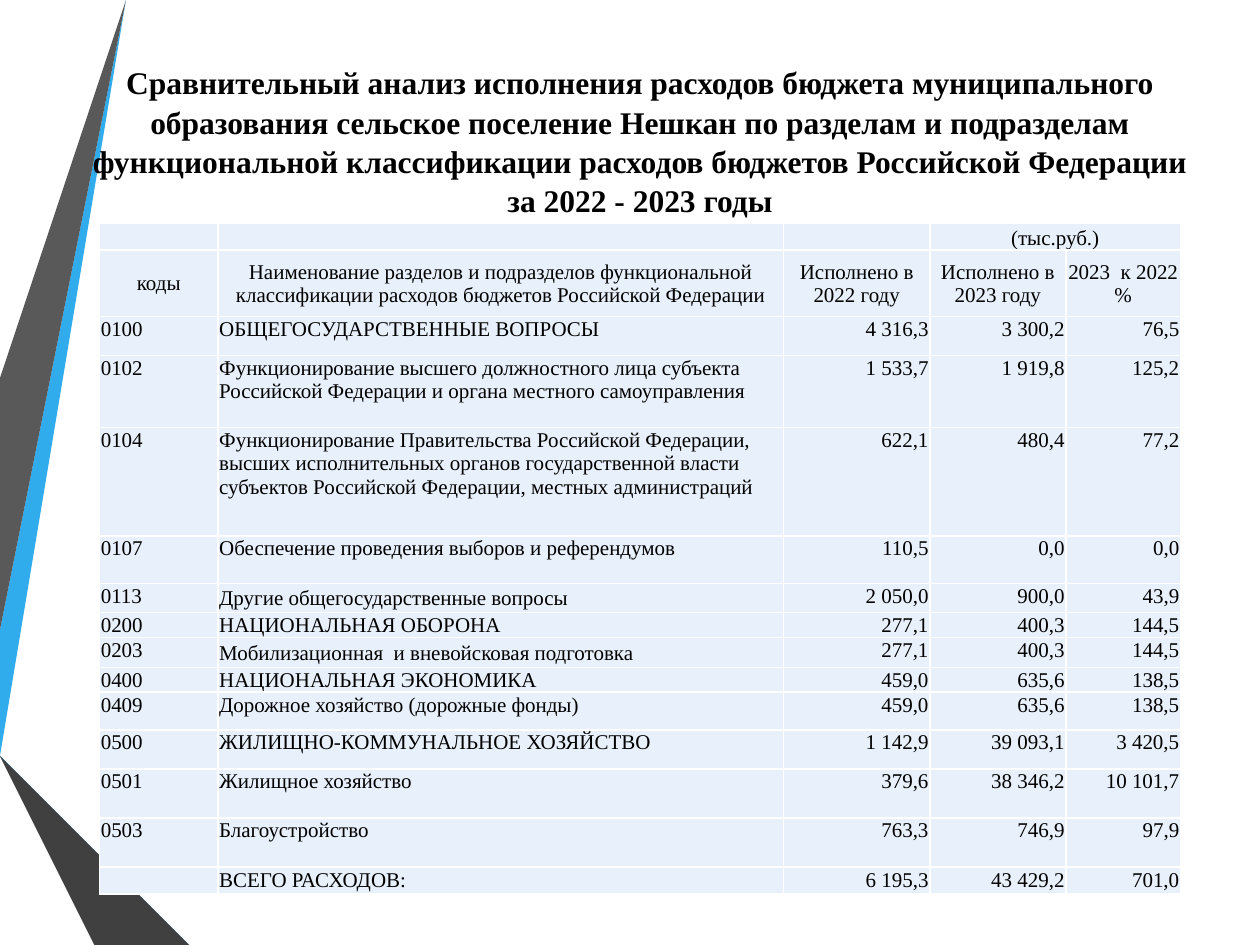
from lxml.etree import SubElement
from pptx import Presentation
from pptx.dml.color import RGBColor
from pptx.enum.text import MSO_ANCHOR, MSO_AUTO_SIZE, PP_ALIGN
from pptx.oxml.ns import qn
from pptx.util import Inches, Pt

FONT = "Times New Roman"
CELL_FILL = "E8F1FB"
TITLE = ("Сравнительный анализ исполнения расходов бюджета муниципального "
         "образования сельское поселение Нешкан по разделам и подразделам "
         "функциональной классификации расходов бюджетов Российской Федерации "
         "за 2022 - 2023 годы")

# Ribbons at the left edge: colour and outline points
RIBBONS = [
    ("30ACEC", [(0, 5.44), (0, 5.75), (0.22, 5.79), (1.17, 0), (0.89, 0)]),
    ("595959", [(0.83, 0), (0.55, 0), (0, 3.36), (0, 5.06)]),
    ("262626", [(0, 6.19), (0, 6.21), (0.93, 7.5), (0.99, 7.5)]),
    ("0C5A82", [(0, 5.79), (0, 5.8), (1.56, 7.5), (1.63, 7.5)]),
    ("1287C3", [(0, 5.79), (1.63, 7.5), (2.33, 7.5), (0.22, 5.79), (0, 5.75)]),
    ("404040", [(0, 6.19), (0.99, 7.5), (1.51, 7.5), (0, 5.86)]),
]

COL_WIDTHS = [0.94, 4.49, 1.16, 1.08, 0.91]
UNITS = ["", "", "", "(тыс.руб.)", ""]
HEADER = ["коды",
          "Наименование разделов и подразделов функциональной "
          "классификации расходов бюджетов Российской Федерации",
          "Исполнено в 2022 году", "Исполнено в 2023 году", "2023  к 2022 %"]
# Row height, then the cell texts
ROWS = [
    (0.2, UNITS),
    (0.53, HEADER),
    (0.31, ["0100", "ОБЩЕГОСУДАРСТВЕННЫЕ ВОПРОСЫ", "4 316,3", "3 300,2", "76,5"]),
    (0.57, ["0102", "Функционирование высшего должностного лица субъекта "
            "Российской Федерации и органа местного самоуправления",
            "1 533,7", "1 919,8", "125,2"]),
    (0.86, ["0104", "Функционирование Правительства Российской Федерации, высших "
            "исполнительных органов государственной власти субъектов "
            "Российской Федерации, местных администраций",
            "622,1", "480,4", "77,2"]),
    (0.38, ["0107", "Обеспечение проведения выборов и референдумов",
            "110,5", "0,0", "0,0"]),
    (0.23, ["0113", "Другие общегосударственные вопросы",
            "2 050,0", "900,0", "43,9"]),
    (0.16, ["0200", "НАЦИОНАЛЬНАЯ ОБОРОНА", "277,1", "400,3", "144,5"]),
    (0.24, ["0203", "Мобилизационная  и вневойсковая подготовка",
            "277,1", "400,3", "144,5"]),
    (0.16, ["0400", "НАЦИОНАЛЬНАЯ ЭКОНОМИКА", "459,0", "635,6", "138,5"]),
    (0.3, ["0409", "Дорожное хозяйство (дорожные фонды)",
           "459,0", "635,6", "138,5"]),
    (0.31, ["0500", "ЖИЛИЩНО-КОММУНАЛЬНОЕ ХОЗЯЙСТВО",
            "1 142,9", "39 093,1", "3 420,5"]),
    (0.39, ["0501", "Жилищное хозяйство", "379,6", "38 346,2", "10 101,7"]),
    (0.39, ["0503", "Благоустройство", "763,3", "746,9", "97,9"]),
    (0.16, ["", "ВСЕГО РАСХОДОВ:", "6 195,3", "43 429,2", "701,0"]),
]
MIDDLE_NAMES = ("0113", "0203")  # rows whose name is centred vertically


def color(hex_string):
    return RGBColor.from_string(hex_string)


def format_text(p, size, align, bold=False):
    p.alignment = align
    for r in p.runs:
        r.font.name = FONT
        r.font.size = Pt(size)
        r.font.bold = bold
        r.font.color.rgb = color("000000")
    if not p.runs:  # an empty cell keeps the small line height
        SubElement(p._p, qn("a:endParaRPr"), sz=str(size * 100))


def add_ribbon(s, fill, points):
    builder = s.shapes.build_freeform(*points[0], scale=Inches(1))
    builder.add_line_segments(points[1:], close=True)
    sp = builder.convert_to_shape()
    sp.shadow.inherit = False
    sp.fill.solid()
    sp.fill.fore_color.rgb = color(fill)
    sp.line.fill.background()


def set_title(s):
    sp = s.shapes.title
    sp.left, sp.top = Inches(0.59), Inches(0.44)
    sp.width, sp.height = Inches(8.98), Inches(1.31)
    tf = sp.text_frame
    tf.word_wrap = True
    tf.auto_size = MSO_AUTO_SIZE.NONE
    tf.vertical_anchor = MSO_ANCHOR.TOP
    tf.text = TITLE
    p = tf.paragraphs[0]
    p.line_spacing = 1.04
    format_text(p, 18, PP_ALIGN.CENTER, bold=True)
    # Bring the title in front of the ribbons
    sp.element.getparent().append(sp.element)


def set_borders(cell):
    tc_pr = cell._tc.get_or_add_tcPr()
    for i, side in enumerate(("lnL", "lnR", "lnT", "lnB")):
        ln = SubElement(tc_pr, qn(f"a:{side}"), w=str(Pt(1)))
        fill = SubElement(ln, qn("a:solidFill"))
        SubElement(fill, qn("a:srgbClr"), val="FFFFFF")
        tc_pr.insert(i, ln)


def cell_layout(texts, col):
    """Alignment and anchor follow from the row kind and the column."""
    if texts is UNITS:
        return PP_ALIGN.CENTER, MSO_ANCHOR.BOTTOM
    if texts is HEADER:
        return PP_ALIGN.CENTER, MSO_ANCHOR.MIDDLE
    if col >= 2:
        return PP_ALIGN.RIGHT, MSO_ANCHOR.TOP
    if col == 1 and texts[0] in MIDDLE_NAMES:
        return PP_ALIGN.LEFT, MSO_ANCHOR.MIDDLE
    return PP_ALIGN.LEFT, MSO_ANCHOR.TOP


def fill_cell(cell, text, align, anchor):
    cell.margin_left = cell.margin_right = cell.margin_top = Inches(0.01)
    cell.margin_bottom = 0
    cell.vertical_anchor = anchor
    cell.fill.solid()
    cell.fill.fore_color.rgb = color(CELL_FILL)
    set_borders(cell)
    if text:
        cell.text_frame.text = text
    format_text(cell.text_frame.paragraphs[0], 12, align)


def add_budget_table(s):
    height = sum(h for h, _ in ROWS)
    frame = s.shapes.add_table(len(ROWS), len(COL_WIDTHS), Inches(0.79),
                               Inches(1.77), Inches(sum(COL_WIDTHS)), Inches(height))
    table = frame.table
    for column, width in zip(table.columns, COL_WIDTHS):
        column.width = Inches(width)
    for row, (row_height, texts) in zip(table.rows, ROWS):
        row.height = Inches(row_height)
        for col, (cell, text) in enumerate(zip(row.cells, texts)):
            fill_cell(cell, text, *cell_layout(texts, col))
    table.cell(0, 3).merge(table.cell(0, 4))


def main():
    prs = Presentation()
    prs.slide_width, prs.slide_height = Inches(10), Inches(7.5)
    s = prs.slides.add_slide(prs.slide_layouts[5])
    for fill, points in RIBBONS:
        add_ribbon(s, fill, points)
    set_title(s)
    add_budget_table(s)
    prs.save("out.pptx")


if __name__ == "__main__":
    main()
